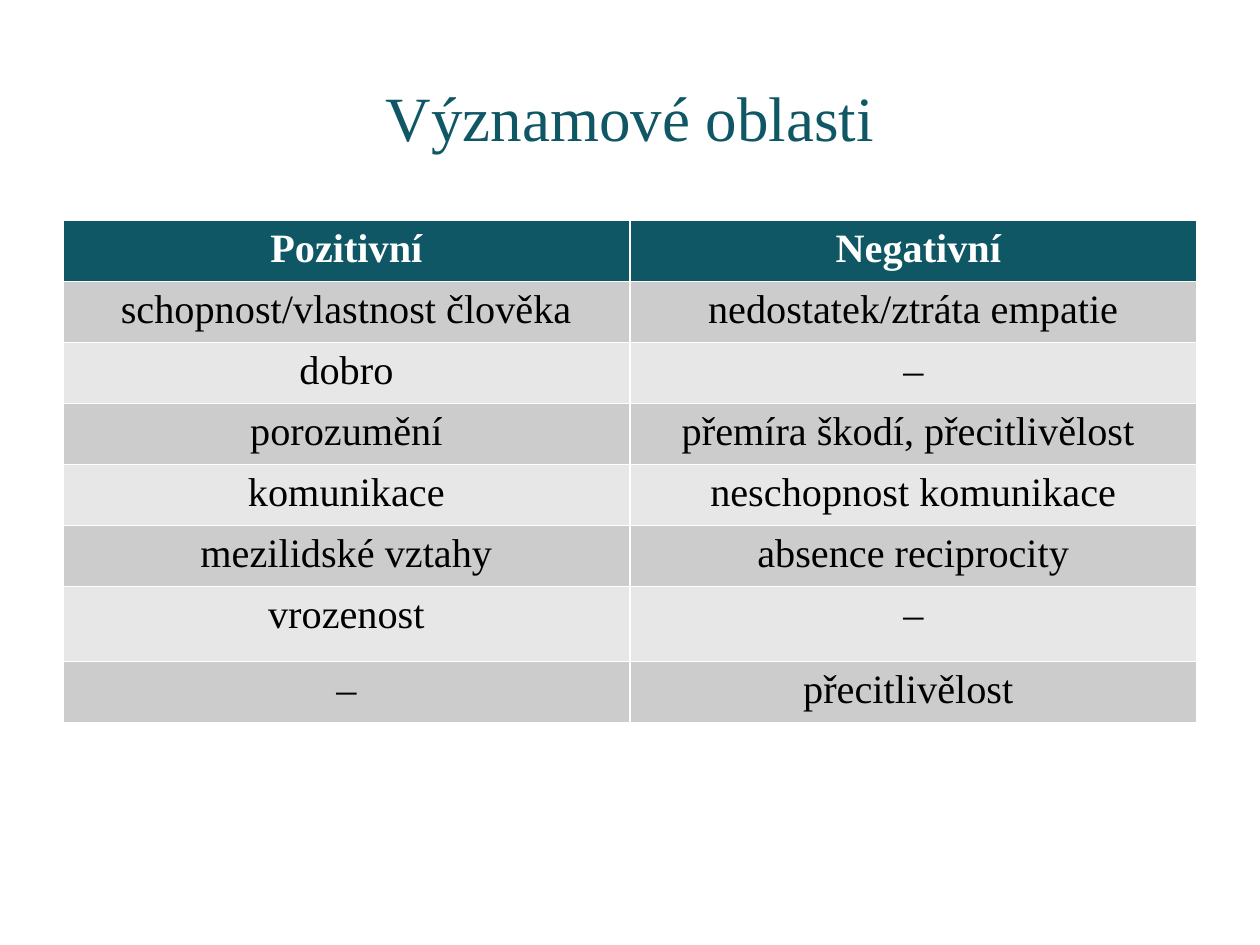
from pptx import Presentation
from pptx.dml.color import RGBColor
from pptx.enum import text
from pptx.util import Cm, Pt

FONT = "Times New Roman"
TEAL = RGBColor(0x10, 0x57, 0x66)
WHITE = RGBColor(0xFF, 0xFF, 0xFF)
BLACK = RGBColor(0, 0, 0)
DARK_BAND = RGBColor(0xCC, 0xCC, 0xCC)
LIGHT_BAND = RGBColor(0xE7, 0xE7, 0xE7)

LEFT, WIDTH = Cm(1.27), Cm(22.86)
ROW_HEIGHT, TALL_ROW_HEIGHT = Cm(1.04), Cm(1.52)
TALL_ROW = 6

MEANINGS = [
    ("Pozitivní", " Negativní"),
    ("schopnost/vlastnost člověka", "nedostatek/ztráta empatie"),
    ("dobro", "–"),
    ("porozumění", "přemíra škodí, přecitlivělost "),
    ("komunikace", "neschopnost komunikace"),
    ("mezilidské vztahy", "absence reciprocity"),
    ("vrozenost", "–"),
    ("–", "přecitlivělost "),
]


def write_centred(text_frame, wording, size, color, bold=False):
    paragraph = text_frame.paragraphs[0]
    paragraph.text = wording
    paragraph.alignment = text.PP_ALIGN.CENTER
    font = paragraph.font
    font.name, font.size, font.bold = FONT, Pt(size), bold
    font.color.rgb = color


def add_title(slide, wording):
    shape = slide.shapes.add_textbox(LEFT, Cm(0.76), WIDTH, Cm(3.18))
    shape.text_frame.word_wrap = True
    shape.text_frame.vertical_anchor = text.MSO_ANCHOR.MIDDLE
    write_centred(shape.text_frame, wording, 36, TEAL)


def add_meanings_table(slide, rows):
    """Add a table with a teal header and alternating grey bands.

    The default table style supplies the white cell borders.
    """
    height = ROW_HEIGHT * (len(rows) - 1) + TALL_ROW_HEIGHT
    table = slide.shapes.add_table(
        len(rows), len(rows[0]), LEFT, Cm(4.45), WIDTH, height).table
    for row_index, wordings in enumerate(rows):
        is_header = row_index == 0
        band = DARK_BAND if row_index % 2 else LIGHT_BAND
        table.rows[row_index].height = (
            TALL_ROW_HEIGHT if row_index == TALL_ROW else ROW_HEIGHT)
        for column_index, wording in enumerate(wordings):
            cell = table.cell(row_index, column_index)
            cell.fill.solid()
            cell.fill.fore_color.rgb = TEAL if is_header else band
            write_centred(cell.text_frame, wording, 23,
                          WHITE if is_header else BLACK, bold=is_header)


def main():
    presentation = Presentation()
    presentation.slide_width, presentation.slide_height = Cm(25.4), Cm(19.05)
    slide = presentation.slides.add_slide(presentation.slide_layouts[6])
    add_title(slide, "Významové oblasti")
    add_meanings_table(slide, MEANINGS)
    presentation.save("out.pptx")


if __name__ == "__main__":
    main()
